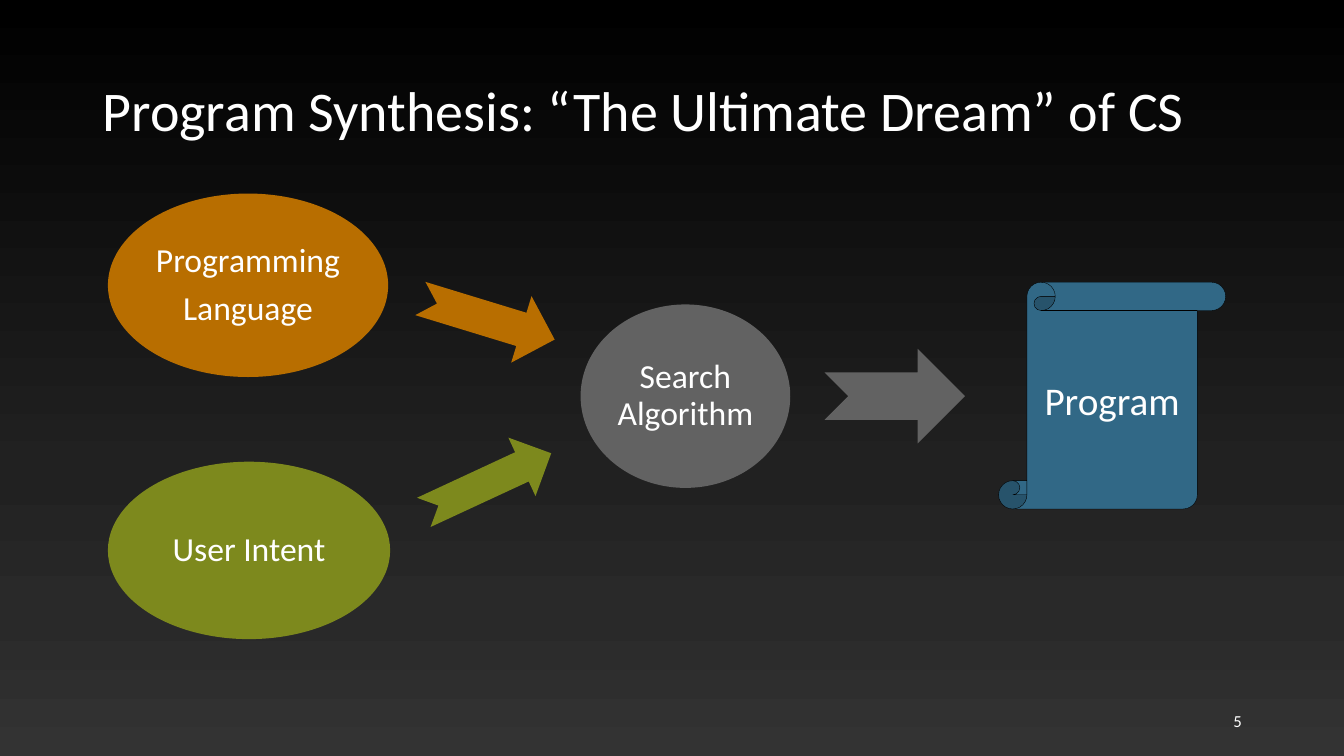
import pptx
import pptx.util
from lxml import etree
from pptx.dml.color import RGBColor
from pptx.enum.shapes import MSO_SHAPE
from pptx.enum.text import MSO_ANCHOR, PP_ALIGN
from pptx.oxml.ns import qn

COLORS = {"orange": "B86E00", "olive": "7D891D", "gray": "626262",
          "blue": "316886", "white": "FFFFFF", "black": "000000"}
FONT = "Calibri"
BACKGROUND = [(0, "333333"), (19, "292929"), (38, "212121"), (100, "000000")]

# Boxes are left, top, width, height in percent of the slide.
TITLE = "Program Synthesis: “The Ultimate Dream” of CS"
TEXTS = [  # text, box, size, alignment, line spacing
    (TITLE, (6.9, 5.33, 86.25, 19.33), 40, PP_ALIGN.LEFT, 0.9),
    ("5", (70.65, 92.67, 22.5, 5.33), 12, PP_ALIGN.RIGHT, 1.0),
]
NODES = [  # lines, preset, box, colour, size, inset in inches
    (["User Intent"], MSO_SHAPE.OVAL, (8.03, 61.07, 21, 23.47), "olive", 24, 0),
    (["Programming", "Language"], MSO_SHAPE.OVAL, (8.03, 25.6, 20.85, 24.27), "orange", 24, 0),
    (["Search Algorithm"], MSO_SHAPE.OVAL, (43.2, 40.27, 15.6, 24.27), "gray", 24, 0),
    (["Program"], MSO_SHAPE.VERTICAL_SCROLL, (74.3, 37.33, 16.9, 30), "blue", 28, 0.04),
]
ARROWS = [  # box, rotation, colour
    ((61.35, 46.13, 10.45, 12.53), 0, "gray"),
    ((31.05, 37.6, 10.45, 9.2), 17, "orange"),
    ((31.05, 59.6, 10.45, 8.53), 335.1, "olive"),
]

prs = pptx.Presentation()
prs.slide_width = pptx.util.Inches(13.33)
prs.slide_height = pptx.util.Inches(7.5)
s = prs.slides.add_slide(prs.slide_layouts[6])


def rgb(name):
    return RGBColor.from_string(COLORS[name])


def place(box):
    sides = (prs.slide_width, prs.slide_height) * 2
    return [round(side * share / 100) for side, share in zip(sides, box)]


def paint_background():
    fill = s.background.fill
    fill.gradient()
    fill.gradient_angle = 90
    stops = s.element.find(".//" + qn("a:gsLst"))
    for stop in list(stops):
        stops.remove(stop)
    for percent, color in BACKGROUND:
        stop = etree.SubElement(stops, qn("a:gs"), pos=str(percent * 1000))
        etree.SubElement(stop, qn("a:srgbClr"), val=color)


def write(sp, lines, size, align, spacing, after=0):
    tf = sp.text_frame
    tf.word_wrap = True
    tf.vertical_anchor = MSO_ANCHOR.MIDDLE
    tf.text = "\n".join(lines)
    for p in tf.paragraphs:
        layout = {"alignment": align, "line_spacing": spacing,
                  "space_after": pptx.util.Pt(after)}
        for name, value in layout.items():
            setattr(p, name, value)
        font = p.runs[0].font
        for name, value in {"name": FONT, "size": pptx.util.Pt(size)}.items():
            setattr(font, name, value)
        font.color.rgb = rgb("white")


def add_filled(preset, box, color):
    sp = s.shapes.add_shape(preset, *place(box))
    sp.shadow.inherit = False
    sp.fill.solid()
    sp.fill.fore_color.rgb = rgb(color)
    if preset == MSO_SHAPE.VERTICAL_SCROLL:
        sp.line.color.rgb = rgb("black")
        sp.line.width = pptx.util.Pt(0.25)
    else:
        sp.line.fill.background()
    return sp


paint_background()
for text, box, size, align, spacing in TEXTS:
    write(s.shapes.add_textbox(*place(box)), [text], size, align, spacing)
for lines, preset, box, color, size, inset in NODES:
    sp = add_filled(preset, box, color)
    for side in ("left", "top", "right", "bottom"):
        setattr(sp.text_frame, "margin_" + side, pptx.util.Inches(inset))
    write(sp, lines, size, PP_ALIGN.CENTER, 0.9, after=0.35 * size)
for box, rotation, color in ARROWS:
    add_filled(MSO_SHAPE.NOTCHED_RIGHT_ARROW, box, color).rotation = rotation

prs.save("out.pptx")
